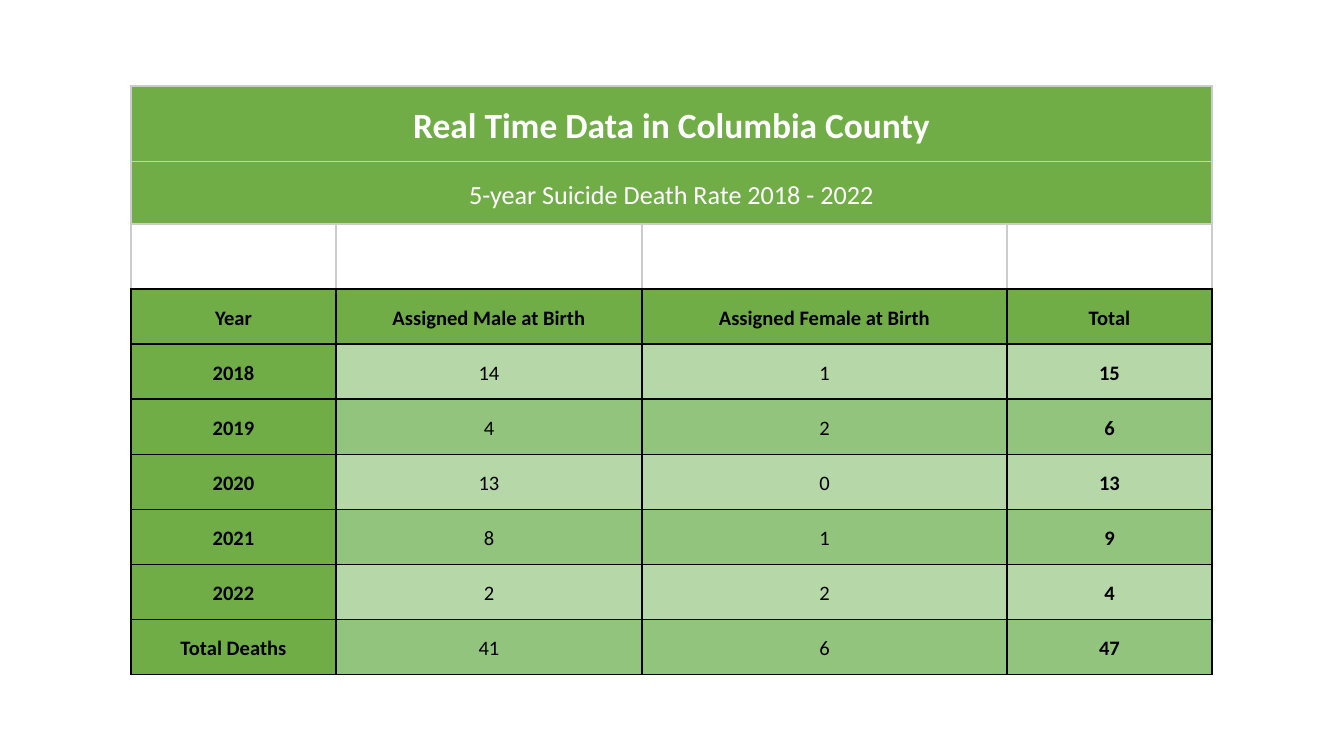
from dataclasses import dataclass

from lxml.etree import SubElement
from pptx import Presentation
from pptx.dml.color import RGBColor
from pptx.enum.text import MSO_ANCHOR, PP_ALIGN
from pptx.oxml import parse_xml
from pptx.oxml.ns import nsdecls, qn
from pptx.table import Table, _Cell
from pptx.util import Emu, Pt

SCALE = 914400 / 134.4
WHITE = RGBColor(0xFF, 0xFF, 0xFF)
BLACK = RGBColor(0x00, 0x00, 0x00)
GREY = RGBColor(0xCC, 0xCC, 0xCC)
GREEN = RGBColor(0x70, 0xAD, 0x47)
PALE_GREEN = RGBColor(0xB6, 0xD7, 0xA8)
MID_GREEN = RGBColor(0x93, 0xC4, 0x7D)

COLUMN_WIDTHS = (205, 306, 365, 205)
ROW_HEIGHTS = (62, 62, 65) + (54,) * 7
BANNER_ROWS = 2
HEADING_ROW = 3
HEADINGS = ("Year", "Assigned Male at Birth", "Assigned Female at Birth", "Total")


@dataclass(frozen=True)
class CellStyle:
    fill: RGBColor
    color: RGBColor = BLACK
    size: int = 11
    bold: bool = True


@dataclass(frozen=True)
class YearCount:
    label: str
    male: int
    female: int

    def texts(self) -> tuple[str, ...]:
        return self.label, str(self.male), str(self.female), str(self.male + self.female)


BANNERS = (
    ("Real Time Data in Columbia County", CellStyle(GREEN, WHITE, 19)),
    ("5-year Suicide Death Rate 2018 - 2022", CellStyle(GREEN, WHITE, 14, False)),
)
YEARS = (
    YearCount("2018", 14, 1),
    YearCount("2019", 4, 2),
    YearCount("2020", 13, 0),
    YearCount("2021", 8, 1),
    YearCount("2022", 2, 2),
)
TOTAL = YearCount(
    "Total Deaths", sum(year.male for year in YEARS), sum(year.female for year in YEARS)
)


def px(length: int) -> Emu:
    return Emu(round(length * SCALE))


def write_cell(cell: _Cell, text: str, style: CellStyle) -> None:
    cell.fill.solid()
    cell.fill.fore_color.rgb = style.fill
    cell.vertical_anchor = MSO_ANCHOR.BOTTOM
    cell.margin_left = cell.margin_right = px(4)
    cell.margin_top = cell.margin_bottom = px(13)
    cell.text = text
    paragraph = cell.text_frame.paragraphs[0]
    paragraph.alignment = PP_ALIGN.CENTER
    paragraph.line_spacing = 1.15
    font = paragraph.font
    font.name = "Calibri"
    font.size = Pt(style.size)
    font.bold = style.bold
    font.color.rgb = style.color


def set_borders(cell: _Cell, side: RGBColor, bottom: RGBColor) -> None:
    properties = cell._tc.get_or_add_tcPr()
    colors = {"lnL": side, "lnR": side, "lnT": side, "lnB": bottom}
    for position, (tag, color) in enumerate(colors.items()):
        line = parse_xml(f'<a:{tag} {nsdecls("a")} w="{Pt(0.75)}"/>')
        fill = SubElement(line, qn("a:solidFill"))
        SubElement(fill, qn("a:srgbClr"), val=str(color))
        properties.insert(position, line)


def fill_table(table: Table) -> None:
    for row, (text, style) in enumerate(BANNERS):
        table.cell(row, 0).merge(table.cell(row, len(COLUMN_WIDTHS) - 1))
        write_cell(table.cell(row, 0), text, style)
    for column, heading in enumerate(HEADINGS):
        table.cell(BANNER_ROWS, column).fill.background()
        write_cell(table.cell(HEADING_ROW, column), heading, CellStyle(GREEN))
    for index, count in enumerate((*YEARS, TOTAL)):
        band = MID_GREEN if index % 2 else PALE_GREEN
        for column, text in enumerate(count.texts()):
            style = CellStyle(band if column else GREEN, bold=column in (0, 3))
            write_cell(table.cell(HEADING_ROW + 1 + index, column), text, style)
    for row in range(len(ROW_HEIGHTS)):
        side = GREY if row < HEADING_ROW else BLACK
        bottom = GREY if row < BANNER_ROWS else BLACK
        for column in range(len(COLUMN_WIDTHS)):
            set_borders(table.cell(row, column), side, bottom)


def main() -> None:
    deck = Presentation()
    deck.slide_width, deck.slide_height = px(1344), px(756)
    page = deck.slides.add_slide(deck.slide_layouts[6])
    frame = page.shapes.add_table(
        len(ROW_HEIGHTS), len(COLUMN_WIDTHS),
        px(131), px(86), px(sum(COLUMN_WIDTHS)), px(sum(ROW_HEIGHTS)),
    )
    table = frame.table
    table.first_row = table.horz_banding = False
    for column, width in zip(table.columns, COLUMN_WIDTHS):
        column.width = px(width)
    for row, height in zip(table.rows, ROW_HEIGHTS):
        row.height = px(height)
    fill_table(table)
    deck.save("out.pptx")


if __name__ == "__main__":
    main()
